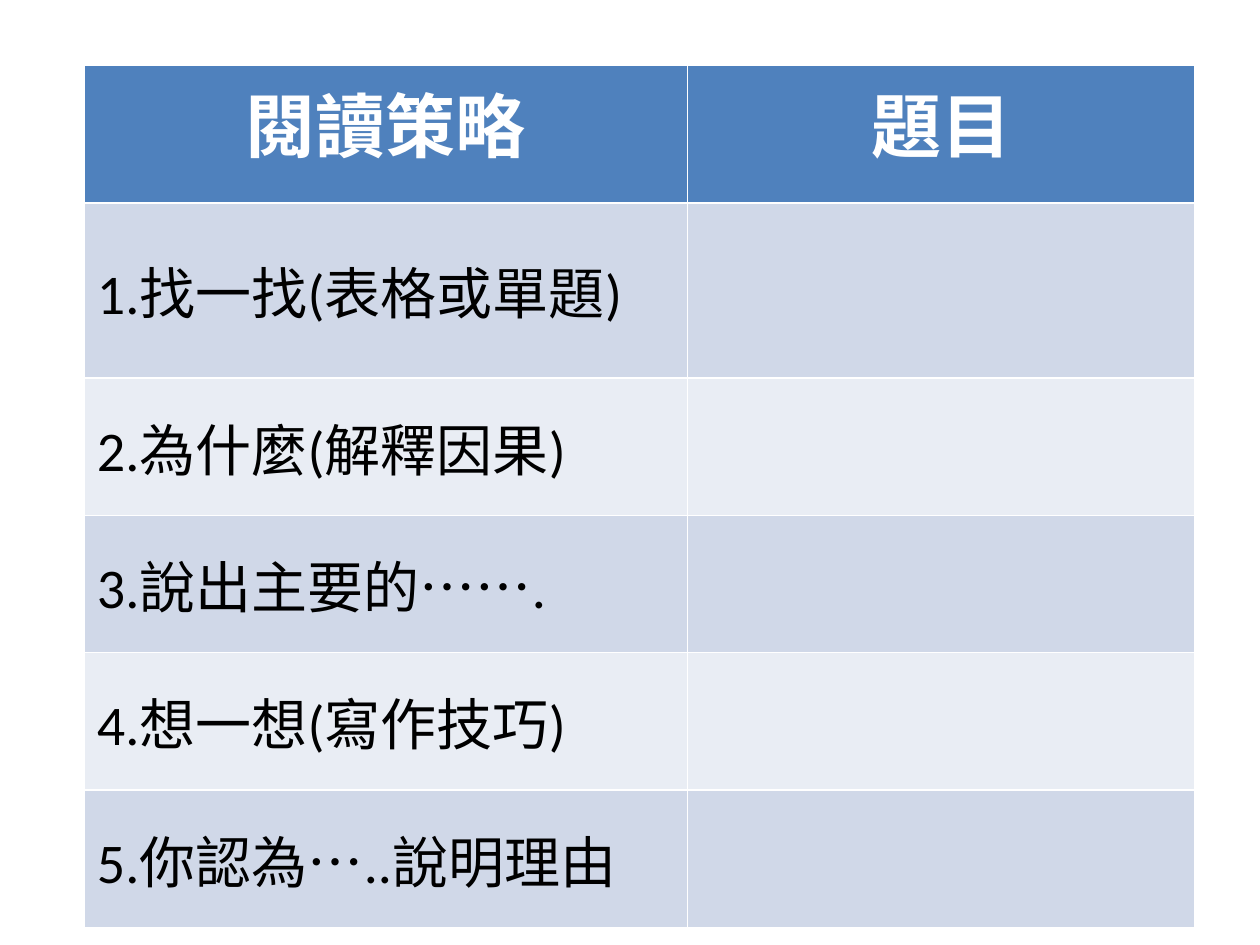
from pptx import Presentation
from pptx.dml.color import RGBColor as RGB
from pptx.enum.text import MSO_ANCHOR as Anchor, PP_ALIGN as Align
from pptx.util import Pt

COLORS = {"header": "4F81BD", "odd": "D0D8E8", "even": "E9EDF4",
          "light": "FFFFFF", "dark": "000000"}
HEADINGS = ["閱讀策略", "題目"]
STRATEGIES = ["1.找一找(表格或單題)", "2.為什麼(解釋因果)", "3.說出主要的…….",
              "4.想一想(寫作技巧)", "5.你認為…..說明理由"]


class WorksheetSlide:
    """Holds the style and the current slide of a reading worksheet."""

    def __init__(self, deck):
        self.slide = deck.slides.add_slide(deck.slide_layouts[6])

    def cell(self, cell, wording, fill, color, size, font, bold, align, anchor):
        cell.fill.solid()
        cell.fill.fore_color.rgb = RGB.from_string(COLORS[fill])
        cell.vertical_anchor = anchor
        cell.text = wording
        paragraph = cell.text_frame.paragraphs[0]
        paragraph.alignment = align
        style = paragraph.font
        style.size, style.name, style.bold = Pt(size), font, bold
        style.color.rgb = RGB.from_string(COLORS[color])

    def table(self, left, top, widths, row_height, headings, entries):
        row_count = len(entries) + 1
        grid = self.slide.shapes.add_table(
            row_count, len(widths), Pt(left), Pt(top),
            Pt(sum(widths)), Pt(row_height * row_count)).table
        for column, width in zip(grid.columns, widths):
            column.width = Pt(width)
        for row in grid.rows:
            row.height = Pt(row_height)
        for index, heading in enumerate(headings):
            self.cell(grid.cell(0, index), heading, "header", "light", 40,
                      "Noto Sans CJK JP", True, Align.CENTER, Anchor.TOP)
        for number, entry in enumerate(entries, 1):
            band = "odd" if number % 2 else "even"
            for index, wording in enumerate([entry, ""]):
                self.cell(grid.cell(number, index), wording, band, "dark", 32,
                          "Calibri", False, Align.LEFT, Anchor.MIDDLE)


def main():
    deck = Presentation()
    deck.slide_width, deck.slide_height = Pt(720), Pt(540)
    worksheet = WorksheetSlide(deck)
    worksheet.table(48.2, 37.4, [344.6, 290.2], 78.5, HEADINGS, STRATEGIES)
    deck.save("out.pptx")


if __name__ == "__main__":
    main()
